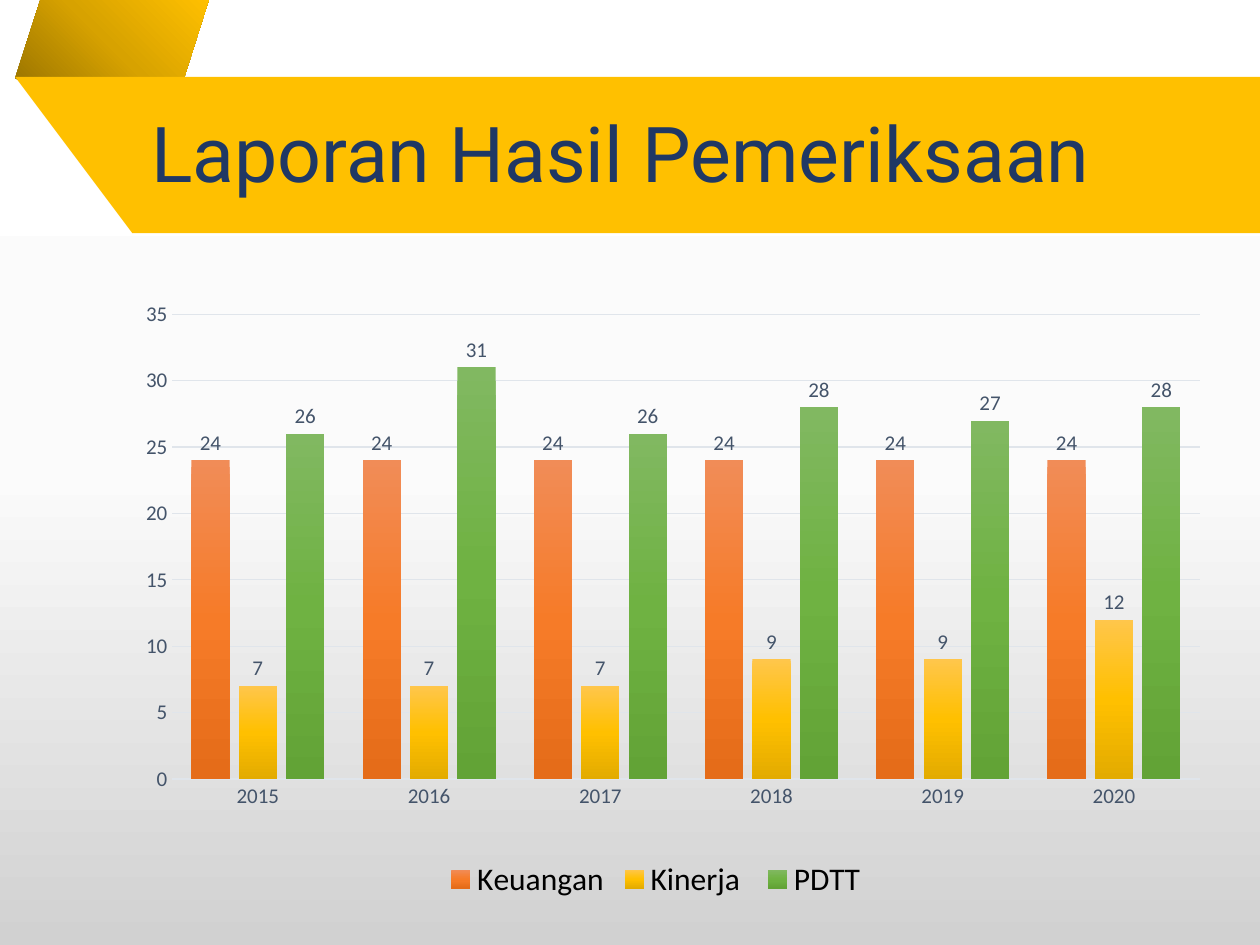
from copy import deepcopy

from pptx import Presentation
from pptx.chart.data import CategoryChartData
from pptx.dml.color import RGBColor
from pptx.enum.chart import XL_CHART_TYPE as ChartType
from pptx.enum.chart import XL_LABEL_POSITION as LabelPosition
from pptx.enum.chart import XL_LEGEND_POSITION as LegendPosition
from pptx.enum.chart import XL_TICK_MARK as TickMark
from pptx.enum.text import MSO_ANCHOR as Anchor
from pptx.enum.text import PP_ALIGN as Align
from pptx.oxml import parse_xml
from pptx.oxml.ns import nsdecls, qn
from pptx.util import Inches, Pt

COLORS = {
    "banner": "FFC000",
    "title": "203864",
    "label": "44546A",
    "legend": "000000",
    "grid": "E0E5EB",
}
BACKGROUND = [(0, "FFFFFF"), (0.5, "FBFBFB"), (1, "D1D1D1")]
FOLD = [(0.2, "977200"), (0.6, "D7A200"), (1, "FFC000")]

YEARS = ["2015", "2016", "2017", "2018", "2019", "2020"]
# Name, values, and bar colours from top to bottom
REPORTS = [
    ("Keuangan", [24, 24, 24, 24, 24, 24], ["F18C57", "F67B28", "E56C19"]),
    ("Kinerja ", [7, 7, 7, 9, 9, 12], ["FFC64B", "FFC000", "E3AB00"]),
    ("PDTT", [26, 31, 26, 28, 27, 28], ["81B861", "6FB242", "62A336"]),
]


def rgb(name):
    return RGBColor.from_string(COLORS[name])


def set_gradient(fill, stops, angle=270):
    """Fill with three stops; the angle runs counter-clockwise."""
    fill.gradient()
    fill.gradient_angle = angle
    first = fill.gradient_stops[0]._gs
    first.addnext(deepcopy(first))
    for stop, (position, color) in zip(fill.gradient_stops, stops):
        stop.position = position
        stop.color.rgb = RGBColor.from_string(color)


def set_font(font, size, color, name="Calibri"):
    font.size = Pt(size)
    font.name = name
    font.bold = False
    font.color.rgb = rgb(color)


def add_outline(page, points):
    corners = [(Inches(x), Inches(y)) for x, y in points]
    builder = page.shapes.build_freeform(*corners[0], scale=1.0)
    builder.add_line_segments(corners[1:], close=True)
    shape = builder.convert_to_shape()
    shape.shadow.inherit = False
    shape.line.fill.background()
    return shape


def add_ribbon(page, left, top, width, height):
    # Folded end, partly behind the banner
    fold = add_outline(page, [(left, top + 0.01), (left + 0.2, 0), (left + 1.54, -0.01),
                              (left + 1.12, top + 0.71)])
    set_gradient(fold.fill, FOLD, 45)

    # Banner with slanted left side
    right, bottom = left + width, top + height
    banner = add_outline(page, [(left + 0.93, bottom), (right, bottom),
                                (right, top), (left, top)])
    banner.fill.solid()
    banner.fill.fore_color.rgb = rgb("banner")


def place_title(page, left, top, width, height):
    title = page.shapes.title
    title.left, title.top = Inches(left), Inches(top)
    title.width, title.height = Inches(width), Inches(height)
    frame = title.text_frame
    frame.text = "Laporan Hasil Pemeriksaan"
    frame.vertical_anchor = Anchor.MIDDLE
    para = frame.paragraphs[0]
    para.alignment = Align.LEFT
    para.line_spacing = 0.9
    set_font(para.font, 44, "title", "Roboto")
    # Bring the title in front of the ribbon
    title.element.getparent().append(title.element)


def set_plot_layout(chart, x, y, w, h):
    area = chart._chartSpace.chart.plotArea
    for layout in area.findall(qn("c:layout")):
        area.remove(layout)
    area.insert(0, parse_xml(
        f'<c:layout {nsdecls("c")}><c:manualLayout><c:layoutTarget val="inner"/>'
        '<c:xMode val="edge"/><c:yMode val="edge"/>'
        f'<c:x val="{x}"/><c:y val="{y}"/><c:w val="{w}"/><c:h val="{h}"/>'
        '</c:manualLayout></c:layout>'))


def style_axes(chart):
    for axis in (chart.category_axis, chart.value_axis):
        axis.major_tick_mark = axis.minor_tick_mark = TickMark.NONE
        set_font(axis.tick_labels.font, 12, "label")
    values = chart.value_axis
    values.minimum_scale, values.maximum_scale, values.major_unit = 0, 35, 5
    values.format.line.fill.background()
    for part in (chart.category_axis, values.major_gridlines):
        part.format.line.color.rgb = rgb("grid")
        part.format.line.width = Pt(0.75)


def add_report_chart(page, left, top, width, height):
    data = CategoryChartData()
    data.categories = YEARS
    for name, values, _ in REPORTS:
        data.add_series(name, values)
    chart = page.shapes.add_chart(ChartType.COLUMN_CLUSTERED, Inches(left), Inches(top),
                                  Inches(width), Inches(height), data).chart
    chart.has_title = False
    set_font(chart.font, 10, "legend")
    set_plot_layout(chart, 0.075, 0.065, 0.903, 0.736)
    style_axes(chart)

    # Bars and their values
    plot = chart.plots[0]
    plot.vary_by_categories = False
    plot.gap_width, plot.overlap = 100, -24
    for series, (_, _, shades) in zip(plot.series, REPORTS):
        set_gradient(series.format.fill, list(zip((0, 0.5, 1), shades)))
        labels = series.data_labels
        labels.show_value = True
        labels.position = LabelPosition.OUTSIDE_END
        set_font(labels.font, 12, "label")

    # Legend
    chart.has_legend = True
    chart.legend.position = LegendPosition.BOTTOM
    chart.legend.include_in_layout = False
    set_font(chart.legend.font, 18, "legend")


def main():
    deck = Presentation()
    deck.slide_width, deck.slide_height = Inches(10), Inches(7.5)
    page = deck.slides.add_slide(deck.slide_layouts.get_by_name("Title Only"))
    set_gradient(page.background.fill, BACKGROUND)
    add_ribbon(page, 0.12, 0.61, 9.9, 1.24)
    place_title(page, 1.1, 0.7, 8.21, 1.1)
    add_report_chart(page, 0.69, 2.17, 9.03, 5.01)
    deck.save("out.pptx")


if __name__ == "__main__":
    main()
